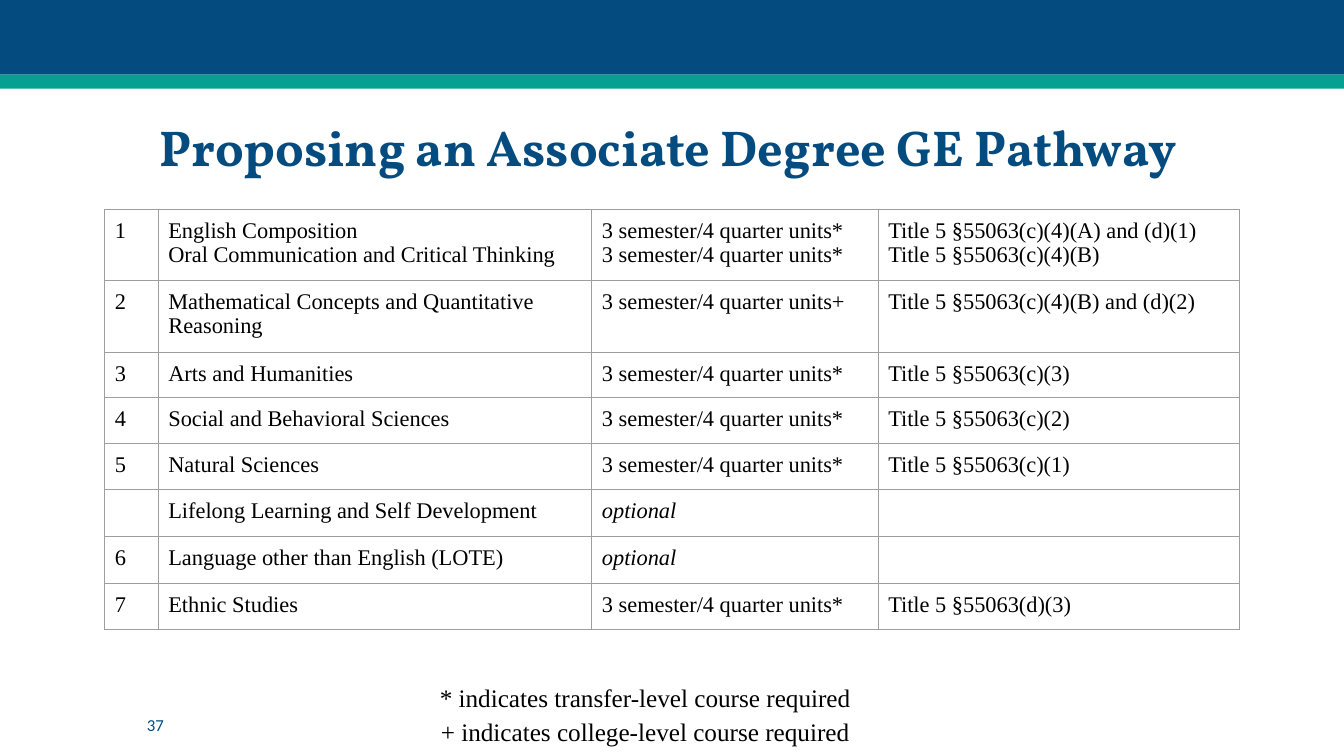
from lxml import etree
from pptx import Presentation
from pptx import util as u
from pptx.dml.color import RGBColor
from pptx.enum import shapes, text
from pptx.oxml import ns

NAVY = RGBColor(0x04, 0x4C, 0x7F)
TEAL = RGBColor(0x04, 0xA1, 0x93)
BLACK = RGBColor(0, 0, 0)
GRAY = RGBColor(0x9E, 0x9E, 0x9E)
SERIF = "Times New Roman"


def write(par, words, size, face, color):
    run = par.add_run()
    run.text = words
    run.font.size = u.Pt(size)
    run.font.name = face
    run.font.color.rgb = color
    return run


def border(cell):
    props = cell._tc.get_or_add_tcPr()
    for n, side in enumerate(("lnL", "lnR", "lnT", "lnB")):
        line = etree.Element(ns.qn("a:" + side), w=str(u.Pt(0.75)))
        fill = etree.SubElement(line, ns.qn("a:solidFill"))
        etree.SubElement(fill, ns.qn("a:srgbClr"), val=str(GRAY))
        props.insert(n, line)


deck = Presentation()
deck.slide_width = u.Inches(13.33)
deck.slide_height = u.Inches(7.5)
slide = deck.slides.add_slide(deck.slide_layouts[5])

for top, high, color in ((0, 0.74, NAVY), (0.74, 0.14, TEAL)):
    bar = slide.shapes.add_shape(
        shapes.MSO_SHAPE.RECTANGLE, 0, u.Inches(top), deck.slide_width, u.Inches(high))
    bar.shadow.inherit = False
    bar.fill.solid()
    bar.fill.fore_color.rgb = color
    bar.line.fill.background()

title = slide.shapes.title
title.left, title.top = u.Inches(0.92), u.Inches(1.11)
title.width, title.height = u.Inches(11.5), u.Inches(0.77)
frame = title.text_frame
frame.word_wrap = True
frame.auto_size = text.MSO_AUTO_SIZE.NONE
frame.vertical_anchor = text.MSO_ANCHOR.MIDDLE
par = frame.paragraphs[0]
par.alignment = text.PP_ALIGN.CENTER
par.line_spacing = 0.9
write(par, "Proposing an Associate Degree GE Pathway ", 36, "Vollkorn", NAVY).font.bold = True

page = slide.shapes.add_textbox(
    u.Inches(1.36), u.Inches(7.07), u.Inches(0.9), u.Inches(0.25))
page.text_frame.word_wrap = True
page.text_frame.vertical_anchor = text.MSO_ANCHOR.MIDDLE
write(page.text_frame.paragraphs[0], "37", 12, "Calibri", NAVY)

UNITS = "3 semester/4 quarter units*"
ROWS = [
    ("1", "English Composition\nOral Communication and Critical Thinking",
     UNITS + "\n" + UNITS,
     "Title 5 §55063(c)(4)(A) and (d)(1)\nTitle 5 §55063(c)(4)(B)"),
    ("2", "Mathematical Concepts and Quantitative Reasoning",
     "3 semester/4 quarter units+", "Title 5 §55063(c)(4)(B) and (d)(2)"),
    ("3", "Arts and Humanities", UNITS, "Title 5 §55063(c)(3)"),
    ("4", "Social and Behavioral Sciences", UNITS, "Title 5 §55063(c)(2)"),
    ("5", "Natural Sciences", UNITS, "Title 5 §55063(c)(1)"),
    ("", "Lifelong Learning and Self Development", "optional", ""),
    ("6", "Language other than English (LOTE)", "optional", ""),
    ("7", "Ethnic Studies", UNITS, "Title 5 §55063(d)(3)"),
]
WIDTHS = (0.53, 4.3, 2.84, 3.58)
HIGH = 0.42

table = slide.shapes.add_table(
    len(ROWS), len(WIDTHS), u.Inches(1.04), u.Inches(2.08),
    u.Inches(sum(WIDTHS)), u.Inches(HIGH * len(ROWS))).table
table.first_row = False
table.horz_banding = False
for col, width in zip(table.columns, WIDTHS):
    col.width = u.Inches(width)
for row, items in zip(table.rows, ROWS):
    row.height = u.Inches(HIGH)
    for cell, words in zip(row.cells, items):
        cell.margin_left = cell.margin_right = u.Inches(0.1)
        cell.margin_top = cell.margin_bottom = u.Inches(0.1)
        cell.fill.background()
        border(cell)
        for n, line in enumerate(words.split("\n")):
            frame = cell.text_frame
            par = frame.add_paragraph() if n else frame.paragraphs[0]
            par.line_spacing = 0.95
            if line:
                run = write(par, line, 16, SERIF, BLACK)
                run.font.italic = line == "optional"
            else:
                par.font.size = u.Pt(16)

notes = slide.shapes.add_textbox(
    u.Inches(3.31), u.Inches(6.62), u.Inches(6.18), u.Inches(0.85))
frame = notes.text_frame
frame.word_wrap = True
frame.auto_size = text.MSO_AUTO_SIZE.SHAPE_TO_FIT_TEXT
frame.margin_left = frame.margin_right = u.Inches(0.1)
frame.margin_top = frame.margin_bottom = u.Inches(0.1)
LINES = ("* indicates transfer-level course required",
         "+ indicates college-level course required")
for n, line in enumerate(LINES):
    par = frame.add_paragraph() if n else frame.paragraphs[0]
    par.alignment = text.PP_ALIGN.CENTER
    par.line_spacing = 1.15
    write(par, line, 18, SERIF, BLACK)

deck.save("out.pptx")
